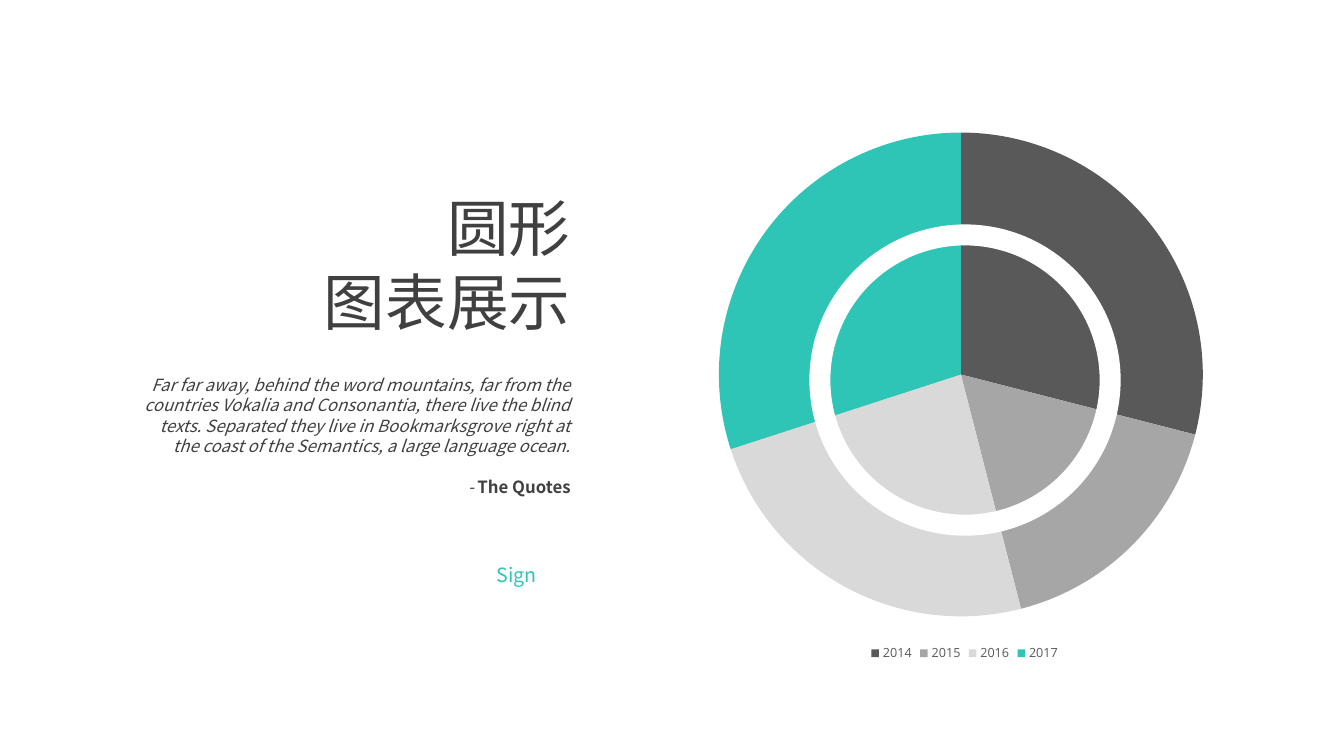
import pptx
import pptx.util
import pptx.chart.data
import pptx.dml.color
import pptx.enum.chart
import pptx.enum.shapes
import pptx.enum.text
import pptx.oxml
import pptx.oxml.ns

WIDE, HIGH = pptx.util.Inches(13.33), pptx.util.Inches(7.5)
COL, ROW = WIDE / 100, HIGH / 100
FONT = "Noto Sans CJK SC"
HUES = {"ink": "404040", "dark": "595959", "mid": "A6A6A6",
        "pale": "D9D9D9", "teal": "2EC4B6", "white": "FFFFFF"}
YEARS = ["2014", "2015", "2016", "2017"]
SLICES = ["dark", "mid", "pale", "teal"]
VALUES = [(29, 17, 24, 30), (25, 46, 19, 10), (17, 17, 25, 42), (10, 29, 26, 36)]
QUOTE = ("Far far away, behind the word mountains, far from the countries Vokalia "
         "and Consonantia, there live the blind texts. Separated they live in "
         "Bookmarksgrove right at the coast of the Semantics, a large language ocean.")


def hue(name):
    return pptx.dml.color.RGBColor.from_string(HUES[name])


def place(left, top, wide, high):
    return [round(n) for n in (left * COL, top * ROW, wide * COL, high * ROW)]


def style(run, size, tint, slant=False, bold=False):
    font = run.font
    font.name, font.size = FONT, pptx.util.Pt(size)
    font.italic, font.bold = slant, bold
    font.color.rgb = hue(tint)
    east = pptx.oxml.parse_xml(
        f'<a:ea {pptx.oxml.ns.nsdecls("a")} typeface="{FONT}"/>')
    run.font._element.find(pptx.oxml.ns.qn("a:latin")).addnext(east)


def add_text(slide, area, lines, size, lead, tint="ink", side="RIGHT", slant=False):
    frame = slide.shapes.add_textbox(*place(*area)).text_frame
    frame.word_wrap = True
    frame.text = "\n".join(lines)
    for para in frame.paragraphs:
        para.alignment = getattr(pptx.enum.text.PP_ALIGN, side)
        para.line_spacing = pptx.util.Pt(lead)
        for run in para.runs:
            style(run, size, tint, slant)
    return frame


def add_quote(slide, area):
    size, lead = 12, 14.5
    frame = add_text(slide, area, [QUOTE, "- "], size, lead, slant=True)
    last = frame.paragraphs[-1]
    last.space_before = pptx.util.Pt(lead)
    run = last.add_run()
    run.text = "The Quotes"
    style(run, size, "ink", bold=True)


def fix_plot(chart, left, top, wide, high):
    plot = chart._chartSpace.chart.plotArea
    for old in plot.findall(pptx.oxml.ns.qn("c:layout")):
        plot.remove(old)
    parts = zip("xywh", (left, top, wide, high))
    sizes = "".join(f'<c:{key} val="{val}"/>' for key, val in parts)
    plot.insert(0, pptx.oxml.parse_xml(
        f'<c:layout {pptx.oxml.ns.nsdecls("c")}><c:manualLayout>'
        '<c:layoutTarget val="inner"/><c:xMode val="edge"/><c:yMode val="edge"/>'
        f'{sizes}</c:manualLayout></c:layout>'))


def add_pie(slide, area):
    data = pptx.chart.data.CategoryChartData()
    data.categories = YEARS
    for num, row in enumerate(VALUES, 1):
        data.add_series(f"Series {num}", row)
    kind = pptx.enum.chart.XL_CHART_TYPE.PIE
    chart = slide.shapes.add_chart(kind, *place(*area), data).chart
    chart.replace_data(data)
    chart.has_title = False
    chart.has_legend = True
    chart.legend.position = pptx.enum.chart.XL_LEGEND_POSITION.BOTTOM
    chart.legend.include_in_layout = False
    for font in (chart.font, chart.legend.font):
        font.name, font.size = "Open Sans", pptx.util.Pt(9)
        font.color.rgb = hue("dark")
    plot = chart.plots[0]
    plot.vary_by_categories = True
    for num, name in enumerate(SLICES):
        form = plot.series[0].points[num].format
        form.fill.solid()
        form.fill.fore_color.rgb = hue(name)
        form.line.fill.background()
    fix_plot(chart, 0.18, 0.02, 0.63, 0.89)


def add_ring(slide, area):
    ring = slide.shapes.add_shape(
        pptx.enum.shapes.MSO_SHAPE.OVAL, *place(*area))
    ring.shadow.inherit = False
    ring.fill.background()
    ring.line.color.rgb = hue("white")
    ring.line.width = pptx.util.Pt(15)


def main():
    deck = pptx.Presentation()
    deck.slide_width, deck.slide_height = WIDE, HIGH
    slide = deck.slides.add_slide(deck.slide_layouts[6])
    add_pie(slide, (43.2, 16, 57.16, 72.13))
    add_ring(slide, (61, 31.07, 21.6, 38.4))
    add_text(slide, (20.2, 24.4, 23, 21.6), ["圆形", "图表展示"], 44, 53)
    add_quote(slide, (9.15, 48.9, 34.05, 17.5))
    add_text(slide, (36.2, 73.7, 7, 4.5), ["Sign"], 14, 17, "teal", "LEFT")
    deck.save("out.pptx")


if __name__ == "__main__":
    main()
